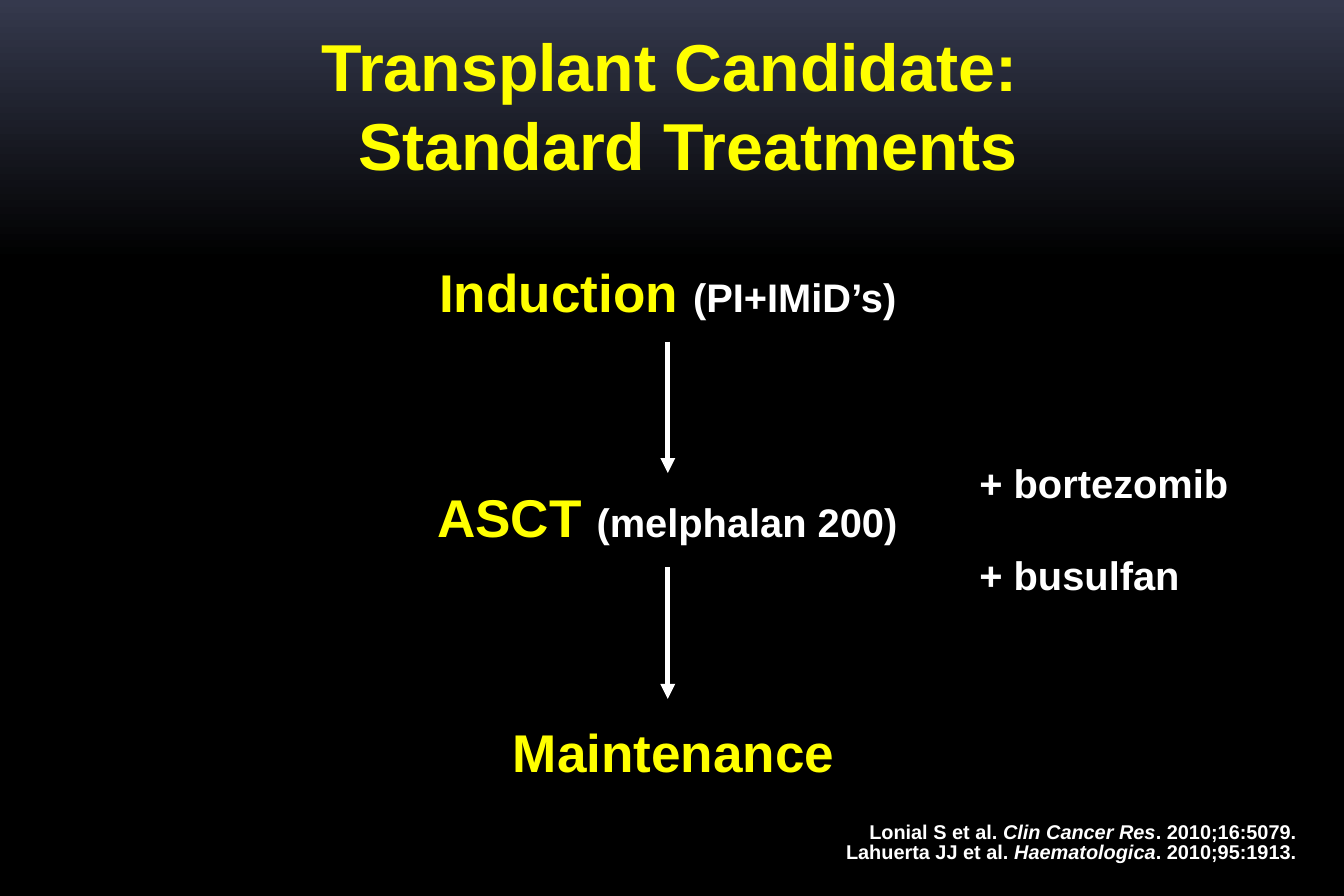
from lxml.etree import SubElement
from pptx import Presentation
from pptx.dml.color import RGBColor
from pptx.enum.shapes import MSO_CONNECTOR, MSO_SHAPE
from pptx.enum.text import MSO_ANCHOR, PP_ALIGN
from pptx.oxml.ns import qn
from pptx.util import Inches, Pt

YELLOW, WHITE, BLACK, SLATE = "FFFF00", "FFFFFF", "000000", "35394D"


def color(value):
    return RGBColor.from_string(value)


class Slide:
    font = "Arial"

    def __init__(self, deck):
        self.page = deck.slides.add_slide(deck.slide_layouts[6])
        self.page.background.fill.solid()
        self.page.background.fill.fore_color.rgb = color(BLACK)

    def gradient_band(self, left, top, width, height, stops):
        band = self.page.shapes.add_shape(
            MSO_SHAPE.RECTANGLE, *map(Inches, (left, top, width, height)))
        band.shadow.inherit = False
        band.line.fill.background()
        band.fill.gradient()
        band.fill.gradient_angle = 270
        for stop, value in zip(band.fill.gradient_stops, stops):
            stop.color.rgb = color(value)

    def text(self, at, lines, align=PP_ALIGN.CENTER, anchor=MSO_ANCHOR.TOP,
             wrap=False, spacing=None):
        """Each line is a list of spans: (text, size, colour[, italic])."""
        box = self.page.shapes.add_textbox(*map(Inches, at))
        frame = box.text_frame
        frame.word_wrap = wrap
        frame.vertical_anchor = anchor
        for index, spans in enumerate(lines):
            para = frame.add_paragraph() if index else frame.paragraphs[0]
            para.alignment = align
            if spacing:
                para.line_spacing = spacing
            for words, size, value, *italic in spans:
                span = para.add_run()
                span.text = words
                span.font.name = self.font
                span.font.size = Pt(size)
                span.font.bold = True
                span.font.italic = bool(italic and italic[0])
                span.font.color.rgb = color(value)

    def down_arrow(self, x, top, length):
        arrow = self.page.shapes.add_connector(
            MSO_CONNECTOR.STRAIGHT, *map(Inches, (x, top, x, top + length)))
        arrow.line.color.rgb = color(WHITE)
        arrow.line.width = Pt(3)
        SubElement(arrow.line._get_or_add_ln(), qn("a:tailEnd"), type="triangle")
        SubElement(arrow._element.spPr, qn("a:effectLst"))


def main():
    deck = Presentation()
    deck.slide_width, deck.slide_height = Inches(11.25), Inches(7.5)
    slide = Slide(deck)
    slide.gradient_band(0, 0, 11.25, 2.18, (SLATE, BLACK))

    title = ("Transplant Candidate: ", " Standard Treatments")
    slide.text((0.62, 0.25, 10.12, 1.25), [[(line, 40, YELLOW)] for line in title],
               anchor=MSO_ANCHOR.MIDDLE, wrap=True)

    steps = [
        ((3.56, 2.12, 4.06, 0.64), [("Induction ", 32, YELLOW), ("(PI+IMiD’s)", 24, WHITE)]),
        ((3.54, 4.01, 4.09, 0.64), [("ASCT ", 32, YELLOW), ("(melphalan 200)", 24, WHITE)]),
        ((4.18, 5.97, 2.92, 0.64), [("Maintenance", 32, YELLOW)]),
    ]
    for at, spans in steps:
        slide.text(at, [spans])
    for top in (2.86, 4.75):
        slide.down_arrow(5.59, top, 1.1)

    for top, width, drug in ((3.79, 2.31, "bortezomib"), (4.56, 1.89, "busulfan")):
        slide.text((8.1, top, width, 0.5), [[("+ " + drug, 24, WHITE)]],
                   align=PP_ALIGN.LEFT)

    references = [
        ("Lonial S et al. ", "Clin Cancer Res", ". 2010;16:5079."),
        ("Lahuerta JJ et al. ", "Haematologica", ". 2010;95:1913."),
    ]
    slide.text((3.97, 6.83, 6.98, 0.45),
               [[(authors, 12, WHITE), (journal, 12, WHITE, True), (issue, 12, WHITE)]
                for authors, journal, issue in references],
               align=PP_ALIGN.RIGHT, anchor=MSO_ANCHOR.BOTTOM, wrap=True, spacing=0.85)

    deck.save("out.pptx")


if __name__ == "__main__":
    main()
